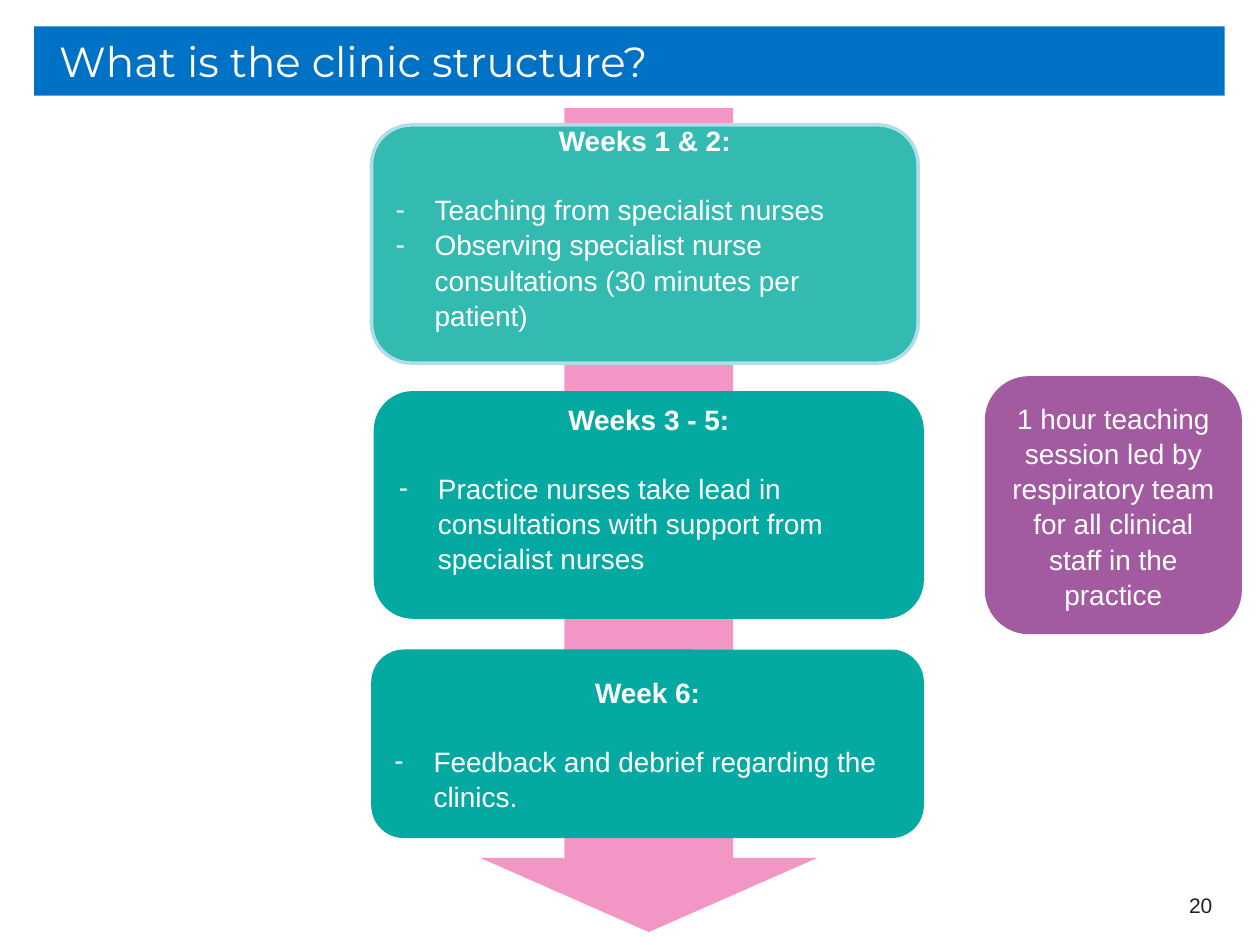
from lxml.etree import SubElement
from pptx import Presentation
from pptx.dml.color import RGBColor
from pptx.enum.shapes import MSO_SHAPE
from pptx.enum.text import MSO_ANCHOR, MSO_AUTO_SIZE, PP_ALIGN
from pptx.oxml.ns import qn
from pptx.util import Cm, Pt

COLOURS = {
    "title": "0072C6", "arrow": "E32486", "pale teal": "33BBB1", "pale edge": "AFDEE9",
    "teal": "04AAA2", "purple": "A25BA0", "white": "FFFFFF", "number": "202020",
}
TITLE = "What is the clinic structure?"
PAGE_NUMBER = "20"
# Left, top, width and height are in centimetres.
STAGES = [
    {"heading": "Weeks 1 & 2:",
     "points": ["Teaching from specialist nurses",
                "Observing specialist nurse consultations (30 minutes per patient)"],
     "at": (7.49, 2.52, 11.02, 4.8), "fill": "pale teal", "edge": "pale edge", "room_below": 0.68},
    {"heading": "Weeks 3 - 5:",
     "points": ["Practice nurses take lead in consultations with support from specialist nurses"],
     "at": (7.57, 7.92, 11.02, 4.52), "fill": "teal", "edge": "teal", "room_below": 0.68},
    {"heading": "Week 6:",
     "points": ["Feedback and debrief regarding the clinics."],
     "at": (7.52, 13.13, 11.07, 3.73), "fill": "teal", "edge": "teal", "room_below": 0},
]
TEACHING = "1 hour teaching session led by respiratory team for all clinical staff in the practice"
TEACHING_AT = (19.89, 7.62, 5.11, 5.13)
ARROW_AT = (9.68, 2.18, 6.8, 16.61)
TITLE_AT = (0.69, 0.53, 24.0, 1.4)
NUMBER_AT = (18.77, 17.73, 5.92, 1.02)
INSET = 0.13
INDENT = 0.79
LINE_SPACING = 1.05
LINE_HEIGHT = Pt(19.2)


def colour(name):
    return RGBColor.from_string(COLOURS[name])


def place(shape, at):
    shape.left, shape.top, shape.width, shape.height = (Cm(value) for value in at)


def format_runs(paragraph, size, font="Arial", ink="white", bold=False):
    for span in paragraph.runs:
        span.font.name = font
        span.font.size = Pt(size)
        span.font.bold = bold
        span.font.color.rgb = colour(ink)


def add_shape(page, kind, at, fill, edge=None):
    shape = page.shapes.add_shape(kind, *(Cm(value) for value in at))
    shape.shadow.inherit = False
    shape.fill.solid()
    shape.fill.fore_color.rgb = colour(fill)
    if edge:
        shape.line.color.rgb = colour(edge)
        shape.line.width = Pt(2)
    else:
        shape.line.fill.background()
    return shape


def add_box(page, texts, at, fill, edge, room_below=0):
    """Add a rounded box: the first text is centred, the others are dashed points."""
    box = add_shape(page, MSO_SHAPE.ROUNDED_RECTANGLE, at, fill, edge)
    frame = box.text_frame
    frame.word_wrap = True
    frame.vertical_anchor = MSO_ANCHOR.MIDDLE
    frame.margin_top = Cm(INSET)
    frame.margin_bottom = Cm(INSET + room_below)
    frame.text = "\n".join(texts)
    for index, paragraph in enumerate(frame.paragraphs):
        paragraph.line_spacing = LINE_SPACING
        is_heading = index == 0 and len(texts) > 1
        format_runs(paragraph, 16, bold=is_heading)
        if index == 0:
            paragraph.alignment = PP_ALIGN.CENTER
        else:
            paragraph.alignment = PP_ALIGN.LEFT
            add_dash(paragraph)
        if is_heading:
            paragraph.space_after = LINE_HEIGHT


def add_dash(paragraph):
    properties = paragraph._p.get_or_add_pPr()
    properties.set("marL", str(Cm(INDENT)))
    properties.set("indent", str(-Cm(INDENT)))
    SubElement(properties, qn("a:buFont")).set("typeface", "Arial")
    SubElement(properties, qn("a:buChar")).set("char", "-")


def add_arrow(page):
    arrow = add_shape(page, MSO_SHAPE.DOWN_ARROW, ARROW_AT, "arrow")
    arrow.adjustments[0] = 0.5
    arrow.adjustments[1] = 0.22
    tint = arrow.fill._xPr.find(qn("a:solidFill")).find(qn("a:srgbClr"))
    SubElement(tint, qn("a:alpha")).set("val", "48000")


def fill_title(page):
    title = page.shapes.title
    place(title, TITLE_AT)
    title.fill.solid()
    title.fill.fore_color.rgb = colour("title")
    frame = title.text_frame
    frame.text = TITLE
    frame.auto_size = MSO_AUTO_SIZE.NONE
    frame.vertical_anchor = MSO_ANCHOR.MIDDLE
    paragraph = frame.paragraphs[0]
    paragraph.alignment = PP_ALIGN.LEFT
    paragraph._p.get_or_add_pPr().set("marL", str(Cm(0.25)))
    format_runs(paragraph, 24, font="Montserrat")


def add_page_number(page):
    box = page.shapes.add_textbox(*(Cm(value) for value in NUMBER_AT))
    frame = box.text_frame
    frame.word_wrap = True
    frame.vertical_anchor = MSO_ANCHOR.MIDDLE
    frame.text = PAGE_NUMBER
    frame.paragraphs[0].alignment = PP_ALIGN.RIGHT
    format_runs(frame.paragraphs[0], 12, ink="number")


def main():
    deck = Presentation()
    deck.slide_width, deck.slide_height = Cm(25.4), Cm(19.05)
    page = deck.slides.add_slide(deck.slide_layouts.get_by_name("Title Only"))
    add_arrow(page)
    fill_title(page)
    add_page_number(page)
    for stage in STAGES:
        add_box(page, [stage["heading"], *stage["points"]], stage["at"],
                stage["fill"], stage["edge"], stage["room_below"])
    add_box(page, [TEACHING], TEACHING_AT, "purple", "purple")
    deck.save("out.pptx")


if __name__ == "__main__":
    main()
